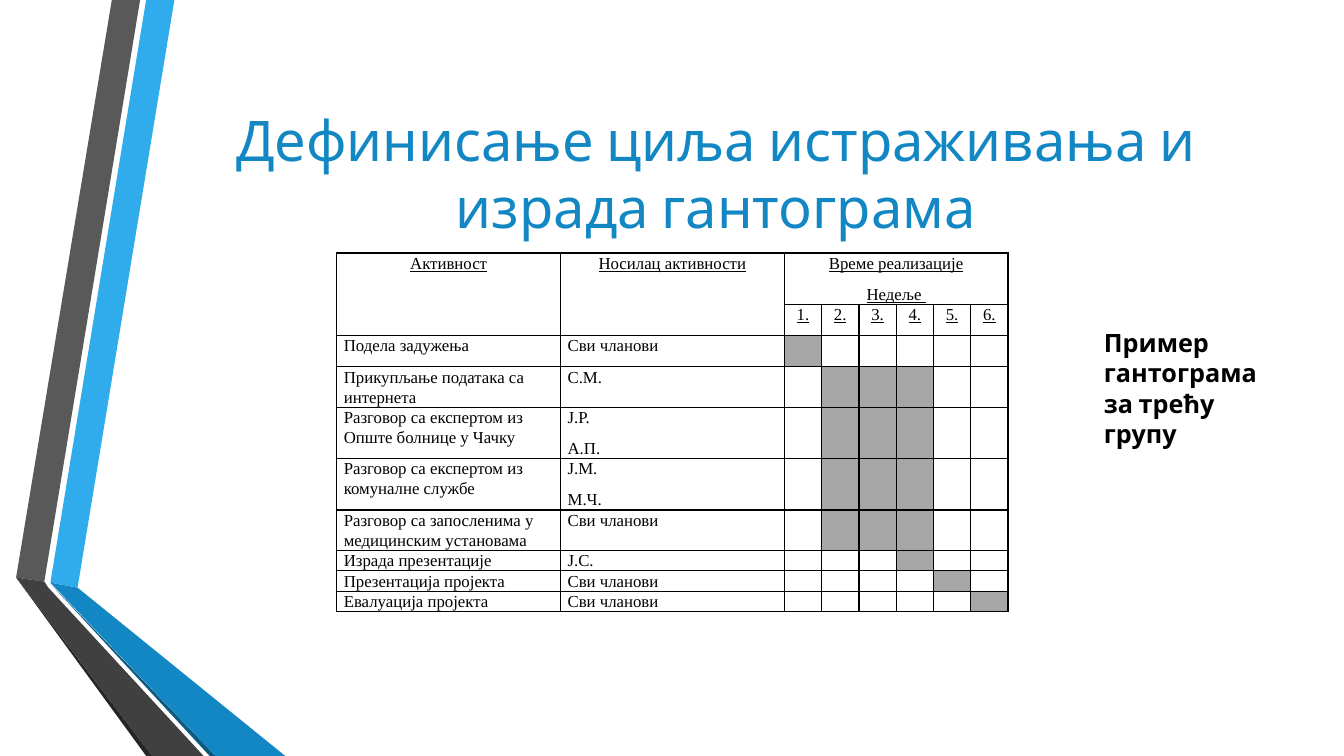
from dataclasses import dataclass

from lxml.etree import SubElement
from pptx import Presentation
from pptx.dml.color import RGBColor
from pptx.enum.text import MSO_ANCHOR, MSO_AUTO_SIZE, PP_ALIGN
from pptx.oxml.ns import qn
from pptx.util import Inches, Pt


@dataclass(frozen=True)
class Theme:
    heading_font: str = "Cabin"
    table_font: str = "Times New Roman"
    title_size: int = 40
    note_size: int = 18
    table_size: int = 12
    border_width: int = 1
    text: str = "000000"
    blue: str = "1287C3"
    light_blue: str = "30ACEC"
    dark_blue: str = "0C5A82"
    gray: str = "595959"
    dark_gray: str = "404040"
    near_black: str = "262626"
    busy_week: str = "A6A6A6"


THEME = Theme()

RIBBONS = [
    (THEME.light_blue, [(0.5, 5.78), (0.77, 5.83), (1.73, 0), (1.45, 0)]),
    (THEME.gray, [(1.39, 0), (1.11, 0), (0.16, 5.73), (0.44, 5.77)]),
    (THEME.near_black, [(0.16, 5.73), (1.45, 7.5), (1.51, 7.5)]),
    (THEME.dark_blue, [(0.5, 5.79), (2.08, 7.5), (2.14, 7.5)]),
    (THEME.blue, [(0.5, 5.78), (2.14, 7.5), (2.83, 7.5), (0.77, 5.83)]),
    (THEME.dark_gray, [(2.02, 7.5), (0.48, 5.83), (0.44, 5.77), (0.16, 5.73), (1.51, 7.5)]),
]

WEEK_COUNT = 6
EVERYONE = ["Сви чланови"]
# Activity, people in charge, busy weeks, row height
ACTIVITIES = [
    ("Подела задужења", EVERYONE, [1], 0.31),
    ("Прикупљање података са интернета", ["С.М."], [2, 3, 4], 0.4),
    ("Разговор са експертом из Опште болнице у Чачку", ["Ј.Р.", "А.П."], [2, 3, 4], 0.51),
    ("Разговор са експертом из комуналне службе", ["Ј.М.", "М.Ч."], [2, 3, 4], 0.51),
    ("Разговор са запосленима у медицинским установама", EVERYONE, [2, 3, 4], 0.4),
    ("Израда презентације", ["Ј.С."], [4], 0.2),
    ("Презентација пројекта", EVERYONE, [5], 0.2),
    ("Евалуација пројекта", EVERYONE, [6], 0.2),
]
HEADER_HEIGHTS = [0.51, 0.31]


def write_text(frame, *lines, size, font, color=THEME.text, bold=False, underline=False,
               align=PP_ALIGN.LEFT, line_spacing=None, space_after=None):
    """Write each line as one paragraph of the text frame."""
    for index, line in enumerate(lines):
        paragraph = frame.add_paragraph() if index else frame.paragraphs[0]
        paragraph.alignment = align
        if line_spacing is not None:
            paragraph.line_spacing = line_spacing
        if space_after is not None:
            paragraph.space_after = Pt(space_after)
        run = paragraph.add_run()
        run.text = line
        run.font.name = font
        run.font.size = Pt(size)
        run.font.bold = bold
        run.font.underline = underline
        run.font.color.rgb = RGBColor.from_string(color)


def add_ribbon(slide, color, points):
    corners = [(Inches(x), Inches(y)) for x, y in points]
    builder = slide.shapes.build_freeform(*corners[0])
    builder.add_line_segments(corners[1:], close=True)
    shape = builder.convert_to_shape()
    shape.shadow.inherit = False
    shape.fill.solid()
    shape.fill.fore_color.rgb = RGBColor.from_string(color)
    shape.line.fill.background()


def add_title(slide, text):
    title = slide.shapes.title
    title.left, title.top = Inches(1.62), Inches(0.75)
    title.width, title.height = Inches(10.96), Inches(1.92)
    frame = title.text_frame
    frame.auto_size = MSO_AUTO_SIZE.NONE
    frame.vertical_anchor = MSO_ANCHOR.MIDDLE
    write_text(frame, text, size=THEME.title_size, font=THEME.heading_font,
               color=THEME.blue, align=PP_ALIGN.CENTER)


def add_note(slide, text):
    box = slide.shapes.add_textbox(Inches(10.85), Inches(3.2), Inches(1.85), Inches(1.01))
    box.text_frame.word_wrap = True
    box.text_frame.auto_size = MSO_AUTO_SIZE.SHAPE_TO_FIT_TEXT
    write_text(box.text_frame, text, size=THEME.note_size, font=THEME.heading_font, bold=True)


def format_cell(cell):
    """Set margins, borders, no fill and the type size of an empty cell."""
    cell.margin_left = cell.margin_right = Inches(0.07)
    cell.margin_top = cell.margin_bottom = 0
    properties = cell._tc.get_or_add_tcPr()
    for side in ("a:lnL", "a:lnR", "a:lnT", "a:lnB"):
        line = SubElement(properties, qn(side), w=str(Pt(THEME.border_width)))
        SubElement(SubElement(line, qn("a:solidFill")), qn("a:srgbClr"), val=THEME.text)
    cell.fill.background()
    SubElement(cell.text_frame.paragraphs[0]._p, qn("a:endParaRPr"),
               sz=str(THEME.table_size * 100))


def write_cell(cell, *lines, header=False):
    write_text(cell.text_frame, *lines, size=THEME.table_size, font=THEME.table_font,
               underline=header, align=PP_ALIGN.CENTER if header else PP_ALIGN.LEFT,
               line_spacing=1.07, space_after=8)


def add_gantt_table(slide):
    widths = [2.22, 2.22] + [0.37] * WEEK_COUNT
    heights = HEADER_HEIGHTS + [activity[-1] for activity in ACTIVITIES]
    table = slide.shapes.add_table(len(heights), len(widths), Inches(3.34), Inches(2.51),
                                   Inches(sum(widths)), Inches(sum(heights))).table
    table.first_row = table.horz_banding = False
    for column, width in zip(table.columns, widths):
        column.width = Inches(width)
    for row, height in zip(table.rows, heights):
        row.height = Inches(height)
    for cell in table.iter_cells():
        format_cell(cell)

    for column, heading in enumerate(["Активност", "Носилац активности"]):
        table.cell(0, column).merge(table.cell(1, column))
        write_cell(table.cell(0, column), heading, header=True)
    table.cell(0, 2).merge(table.cell(0, WEEK_COUNT + 1))
    write_cell(table.cell(0, 2), "Време реализације", "Недеље ", header=True)
    for week in range(1, WEEK_COUNT + 1):
        write_cell(table.cell(1, week + 1), f"{week}.", header=True)

    for row, (activity, people, weeks, _) in enumerate(ACTIVITIES, start=len(HEADER_HEIGHTS)):
        write_cell(table.cell(row, 0), activity)
        write_cell(table.cell(row, 1), *people)
        for week in weeks:
            fill = table.cell(row, week + 1).fill
            fill.solid()
            fill.fore_color.rgb = RGBColor.from_string(THEME.busy_week)


def main():
    presentation = Presentation()
    presentation.slide_width, presentation.slide_height = Inches(13.33), Inches(7.5)
    slide = presentation.slides.add_slide(presentation.slide_layouts.get_by_name("Title Only"))
    for color, points in RIBBONS:
        add_ribbon(slide, color, points)
    add_title(slide, "Дефинисање циља истраживања и израда гантограма")
    add_gantt_table(slide)
    add_note(slide, "Пример гантограма за трећу групу")
    presentation.save("out.pptx")


if __name__ == "__main__":
    main()
